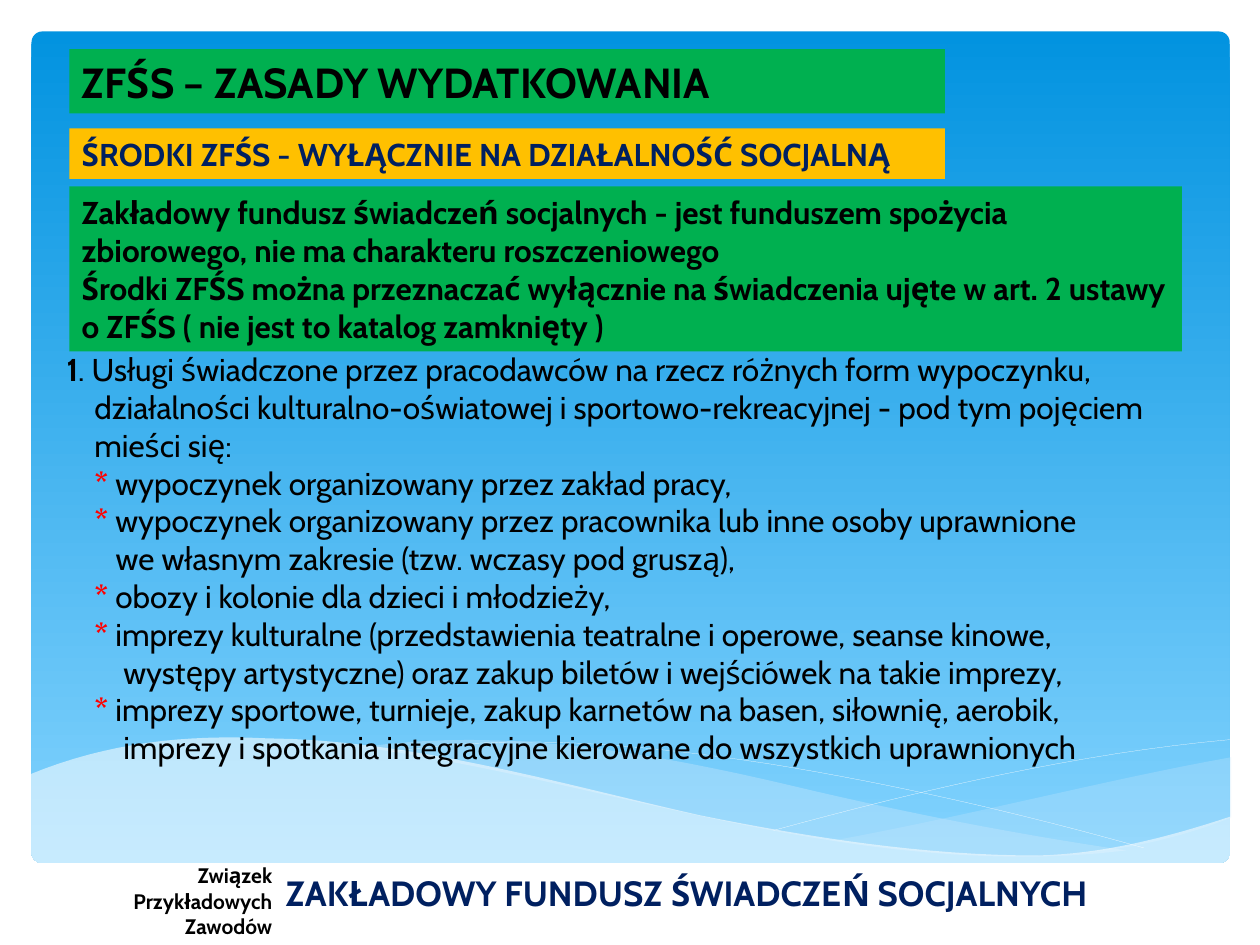
from lxml import etree
from pptx import Presentation, util as u
from pptx.dml.color import RGBColor
from pptx.enum import shapes, text
from pptx.oxml.ns import qn

COLORS = {
    "sky": "0293E0", "light_sky": "83D3FE", "mist": "C6E7FC", "white": "FFFFFF",
    "green": "00B050", "amber": "FFC000", "navy": "002060", "black": "000000", "red": "FF0000",
}
RGB = {name: RGBColor.from_string(value) for name, value in COLORS.items()}
STEPS = 16
BANNER_LEFT = 0.55
MARKER_INDENT = 0.22


def trace_curve(start, *spans):
    points = [start]
    for end_x, first_pull, second_pull, end_y in spans:
        start_x, start_y = points[-1]
        for step in range(1, STEPS + 1):
            t = step / STEPS
            s = 1 - t
            y = (s**3 * start_y + 3 * s**2 * t * first_pull
                 + 3 * s * t**2 * second_pull + t**3 * end_y)
            points.append((s * start_x + t * end_x, y))
    return points


def format_text(shape, size, color, align=text.PP_ALIGN.LEFT, bold=True):
    frame = shape.text_frame
    frame.word_wrap = True
    frame.auto_size = text.MSO_AUTO_SIZE.NONE
    for paragraph in frame.paragraphs:
        paragraph.alignment = align
        for run in paragraph.runs:
            run.font.name = "Cabin"
            run.font.size = u.Pt(size)
            run.font.bold = bold
            run.font.color.rgb = RGB[color]


presentation = Presentation()
presentation.slide_width = u.Inches(10)
presentation.slide_height = u.Inches(7.5)
slide = presentation.slides.add_slide(presentation.slide_layouts[5])

sky = slide.shapes.add_shape(
    shapes.MSO_SHAPE.ROUNDED_RECTANGLE,
    u.Inches(0.25), u.Inches(0.25), u.Inches(9.51), u.Inches(6.6))
sky.adjustments[0] = 0.013
sky.shadow.inherit = False
sky.line.fill.background()
sky.fill.gradient()
sky.fill.gradient_angle = 270
for stop, name in zip(sky.fill.gradient_stops, ("sky", "light_sky")):
    stop.color.rgb = RGB[name]

right_wave = trace_curve(
    (9.77, 6.01), (6.62, 6.2, 6.48, 6.67), (9.77, 6.82, 6.91, 6.49))
middle_wave = trace_curve(
    (8.94, 6.75), (6.3, 6.62, 6.45, 6.24), (2.87, 5.97, 5.77, 5.93),
    (5.3, 6.04, 6.24, 6.42), (8.94, 6.69, 6.9, 6.75))
front_wave = trace_curve(
    (9.77, 6.48), (8.23, 6.65, 6.78, 6.79), (5.55, 6.79, 6.65, 6.47),
    (2.11, 6.21, 5.87, 5.86), (0.23, 5.83, 5.89, 6.15)) + [(0.23, 7.31), (9.77, 7.31)]
falling_line = trace_curve(
    (3.1, 5.97), (6.09, 5.81, 5.91, 6.06), (9.08, 6.22, 6.45, 6.73))
rising_line = trace_curve((6.14, 6.59), (9.76, 6.26, 5.98, 5.87))

for points, color, opacity in [
        (right_wave, "mist", 29), (middle_wave, "mist", 40),
        (falling_line, "white", None), (rising_line, "white", None),
        (front_wave, "white", 55)]:
    is_wave = opacity is not None
    corners = [(u.Inches(x), u.Inches(y)) for x, y in points]
    builder = slide.shapes.build_freeform(*corners[0])
    builder.add_line_segments(corners[1:], close=is_wave)
    curve = builder.convert_to_shape()
    curve.shadow.inherit = False
    if is_wave:
        curve.line.fill.background()
        curve.fill.solid()
        curve.fill.fore_color.rgb = RGB[color]
        color_element = curve._element.spPr.find(".//" + qn("a:srgbClr"))
        etree.SubElement(color_element, qn("a:alpha"), val=str(opacity * 1000))
    else:
        curve.fill.background()
        curve.line.color.rgb = RGB[color]
        curve.line.width = u.Pt(0.1)

title = slide.shapes.title
slide.shapes._spTree.append(title._element)
title.left, title.top = u.Inches(BANNER_LEFT), u.Inches(0.39)
title.width, title.height = u.Inches(6.95), u.Inches(0.51)
title.fill.solid()
title.fill.fore_color.rgb = RGB["green"]
title.text_frame.text = "ZFŚS – ZASADY WYDATKOWANIA"
format_text(title, 24, "black")

for top, width, height, fill, color, words in [
        (1.02, 6.95, 0.4, "amber", "navy", "ŚRODKI ZFŚS - WYŁĄCZNIE NA DZIAŁALNOŚĆ SOCJALNĄ"),
        (1.48, 8.83, 1.31, "green", "black",
         "Zakładowy fundusz świadczeń socjalnych - jest funduszem spożycia zbiorowego, "
         "nie ma charakteru roszczeniowego\vŚrodki ZFŚS można przeznaczać wyłącznie na "
         "świadczenia ujęte w art. 2 ustawy o ZFŚS ( nie jest to katalog zamknięty )")]:
    banner = slide.shapes.add_shape(
        shapes.MSO_SHAPE.RECTANGLE,
        u.Inches(BANNER_LEFT), u.Inches(top), u.Inches(width), u.Inches(height))
    banner.shadow.inherit = False
    banner.line.fill.background()
    banner.fill.solid()
    banner.fill.fore_color.rgb = RGB[fill]
    banner.text_frame.text = words
    format_text(banner, 18, color)

for left, top, width, height, size, color, align, words in [
        (1.14, 6.87, 8.62, 0.44, 20, "navy", text.PP_ALIGN.CENTER,
         "ZAKŁADOWY FUNDUSZ ŚWIADCZEŃ SOCJALNYCH"),
        (0.23, 6.8, 2.03, 0.71, 12, "black", text.PP_ALIGN.RIGHT,
         "Związek\vPrzykładowych\vZawodów")]:
    caption = slide.shapes.add_textbox(
        u.Inches(left), u.Inches(top), u.Inches(width), u.Inches(height))
    caption.text_frame.text = words
    format_text(caption, size, color, align)

body = slide.shapes.add_textbox(
    u.Inches(0.43), u.Inches(2.73), u.Inches(9.21), u.Inches(3.43))
benefits = [
    (0.39, [" wypoczynek organizowany przez zakład pracy,"]),
    (0.39, [" wypoczynek organizowany przez pracownika lub inne osoby uprawnione",
            "we własnym zakresie (tzw. wczasy pod gruszą),"]),
    (0.39, [" obozy i kolonie dla dzieci i młodzieży,"]),
    (0.45, [" imprezy kulturalne (przedstawienia teatralne i operowe, seanse kinowe,",
            "występy artystyczne) oraz zakup biletów i wejściówek na takie imprezy,"]),
    (0.45, [" imprezy sportowe, turnieje, zakup karnetów na basen, siłownię, aerobik,",
            "imprezy i spotkania integracyjne kierowane do wszystkich uprawnionych"]),
]
introduction = (
    ". Usługi świadczone przez pracodawców na rzecz różnych form wypoczynku, działalności "
    "kulturalno-oświatowej i sportowo-rekreacyjnej - pod tym pojęciem mieści się:")
items = [("1", 0, MARKER_INDENT, [introduction])]
items += [("*", MARKER_INDENT, hang, lines) for hang, lines in benefits]

frame = body.text_frame
for number, (marker, start, hang, lines) in enumerate(items):
    paragraph = frame.add_paragraph() if number else frame.paragraphs[0]
    properties = paragraph._p.get_or_add_pPr()
    properties.set("marL", str(u.Inches(hang)))
    properties.set("indent", str(u.Inches(start - hang)))
    paragraph.add_run().text = marker
    for position, line in enumerate(lines):
        if position:
            paragraph.add_line_break()
        paragraph.add_run().text = line
format_text(body, 18, "black", bold=False)
for paragraph in frame.paragraphs:
    marker_run = paragraph.runs[0]
    marker_run.font.bold = True
    if marker_run.text == "*":
        marker_run.font.color.rgb = RGB["red"]

presentation.save("out.pptx")
